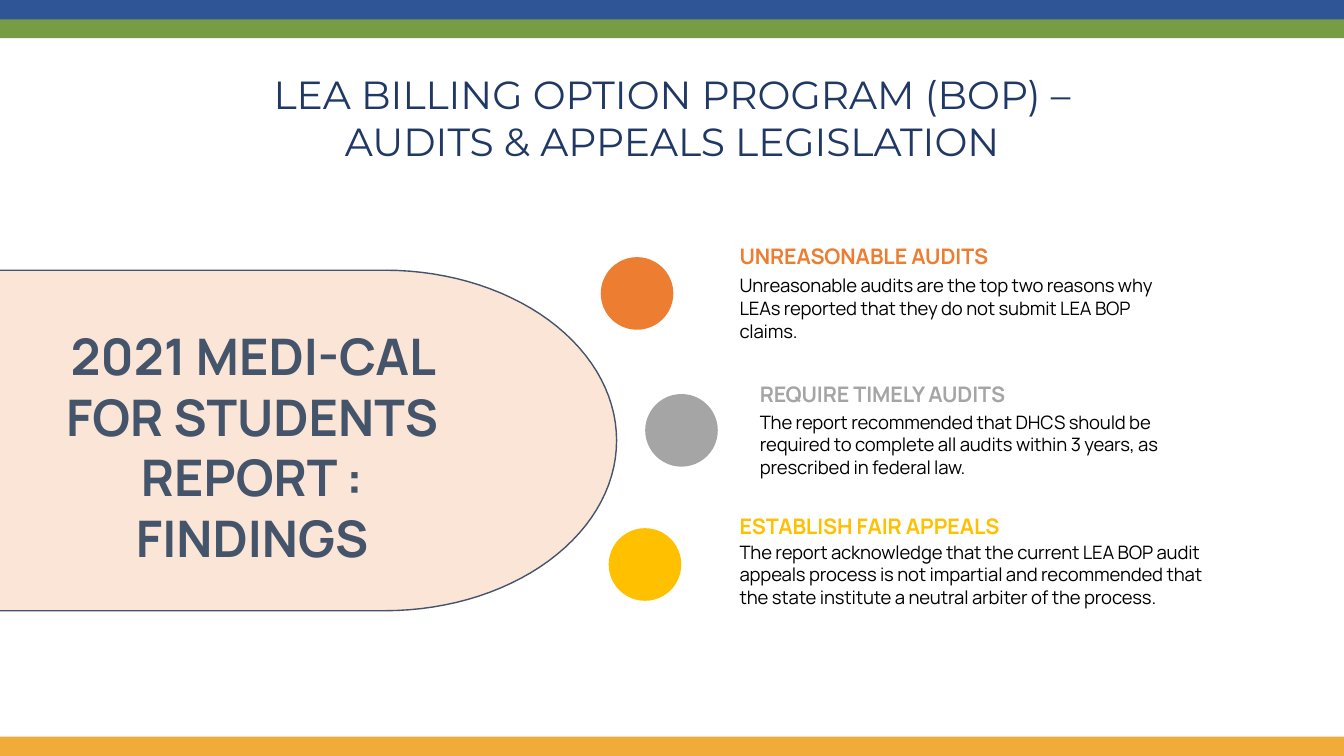
"""Builds the slide on audit findings and appeals legislation."""
from math import cos, pi, sin

from pptx import Presentation
from pptx.dml.color import RGBColor
from pptx.enum.shapes import MSO_SHAPE
from pptx.enum.text import MSO_ANCHOR, MSO_AUTO_SIZE, PP_ALIGN
from pptx.util import Cm, Pt

RECTANGLE, OVAL = MSO_SHAPE.RECTANGLE, MSO_SHAPE.OVAL
TOP, BOTTOM = MSO_ANCHOR.TOP, MSO_ANCHOR.BOTTOM
LEFT, CENTER = PP_ALIGN.LEFT, PP_ALIGN.CENTER
GROW = MSO_AUTO_SIZE.SHAPE_TO_FIT_TEXT
WIDTH, HEIGHT = 33.87, 19.05
SLATE = "44546A"


def paint(shape, fill, line=None):
    shape.shadow.inherit = False
    shape.fill.solid()
    shape.fill.fore_color.rgb = RGBColor.from_string(fill)
    if line:
        shape.line.color.rgb = RGBColor.from_string(line)
        shape.line.width = Pt(1)
    else:
        shape.line.fill.background()


def write(box, lines, size, color, font="Manrope", bold=False, align=LEFT,
          anchor=TOP, leading=None, tracking=None):
    frame = slide.shapes.add_textbox(*map(Cm, box)).text_frame
    frame.word_wrap, frame.auto_size, frame.vertical_anchor = True, GROW, anchor
    for i, line in enumerate(lines):
        paragraph = frame.paragraphs[0] if i == 0 else frame.add_paragraph()
        paragraph.alignment, paragraph.line_spacing = align, leading
        run = paragraph.add_run()
        run.text = line
        for key, value in {"name": font, "size": Pt(size), "bold": bold}.items():
            setattr(run.font, key, value)
        run.font.color.rgb = RGBColor.from_string(color)
        if tracking:
            run.font._element.set("spc", str(tracking))


deck = Presentation()
deck.slide_width, deck.slide_height = Cm(WIDTH), Cm(HEIGHT)
slide = deck.slides.add_slide(deck.slide_layouts[6])

center_x, center_y, radius_x, radius_y = 9.7, 11.1, 5.84, 4.29
steps = 60
curve = [(Cm(center_x + radius_x * cos(angle)), Cm(center_y + radius_y * sin(angle)))
         for angle in (pi * (i / steps - 0.5) for i in range(steps + 1))]
outline = slide.shapes.build_freeform(0, Cm(center_y - radius_y))
outline.add_line_segments(curve + [(0, Cm(center_y + radius_y))], close=False)
paint(outline.convert_to_shape(), "FBE5D6", SLATE)

findings = [
    ("UNREASONABLE AUDITS",
     "Unreasonable audits are the top two reasons why LEAs reported that they "
     "do not submit LEA BOP claims.",
     "ED7D31", 15.14, 6.48, 18.39, 5.99, 6.78, 11.89, 1.96),
    ("REQUIRE TIMELY AUDITS",
     "The report recommended that DHCS should be required to complete all audits "
     "within 3 years, as prescribed in federal law.",
     "A5A5A5", 16.26, 9.93, 18.9, 9.47, 10.21, 11.99, 1.96),
    ("ESTABLISH FAIR APPEALS",
     "The report acknowledge that the current LEA BOP audit appeals process is not "
     "impartial and recommended that the state institute a neutral arbiter of the process.",
     "FFC000", 15.34, 13.31, 18.39, 12.78, 13.49, 12.5, 2.51),
]
for (heading, detail, color, dot_x, dot_y, text_x, heading_y,
     detail_y, detail_width, detail_height) in findings:
    paint(slide.shapes.add_shape(OVAL, *map(Cm, (dot_x, dot_y, 1.83, 1.83))), color)
    write((text_x, heading_y, 10.34, 0.91), [heading], 15.3, color,
          bold=True, anchor=BOTTOM, tracking=-10)
    write((text_x, detail_y, detail_width, detail_height), [detail], 13.2, "000000",
          leading=Pt(16.2), tracking=-10)

write((0.41, 8.08, 11.89, 6.4), ["2021 MEDI-CAL FOR STUDENTS REPORT : FINDINGS"],
      36, SLATE, bold=True, align=CENTER)

for top, height, color in [(0, 0.5, "2F5597"), (0.49, 0.47, "769D44"),
                           (18.56, 0.49, "F1AB39")]:
    paint(slide.shapes.add_shape(RECTANGLE, *map(Cm, (0, top, WIDTH, height))), color)

write((0, 1.65, WIDTH, 2.64),
      ["LEA BILLING OPTION PROGRAM (BOP) –", "AUDITS & APPEALS LEGISLATION"],
      28, "203864", font="Montserrat", align=CENTER)

deck.save("out.pptx")
